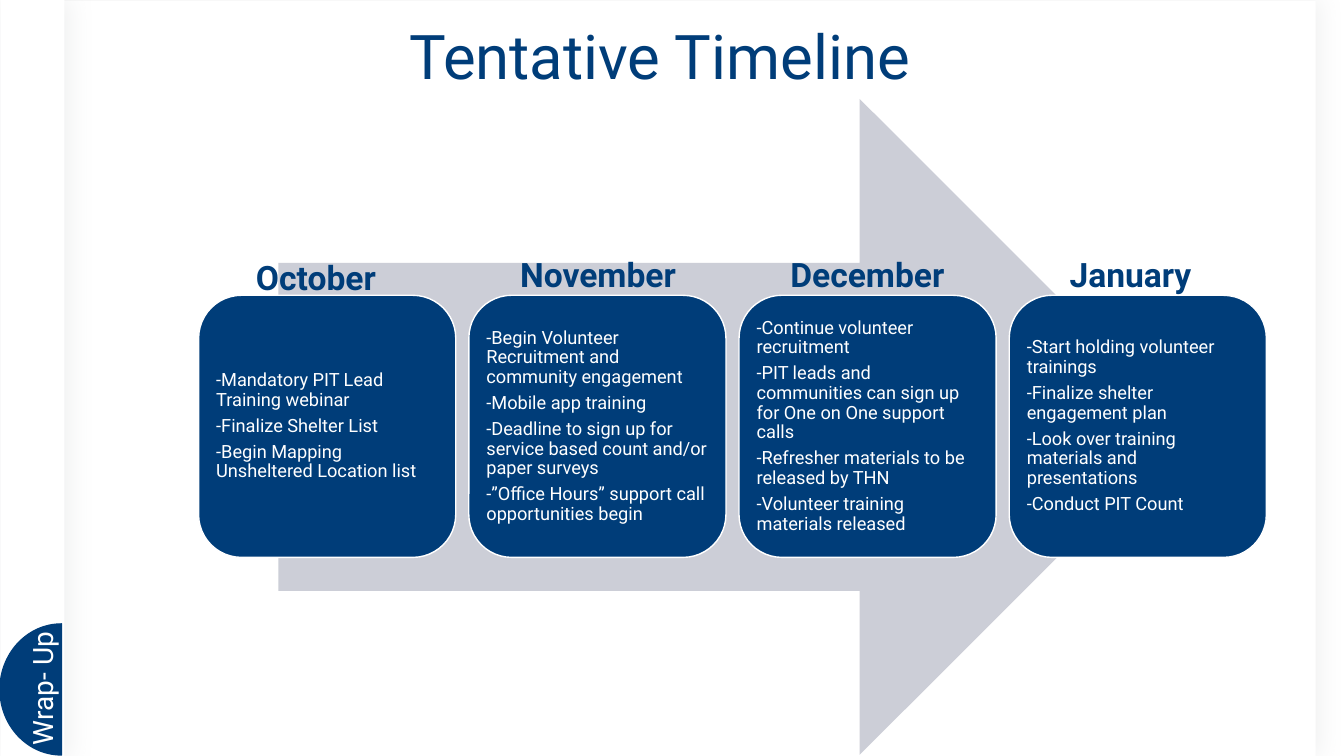
from math import cos, pi, sin

from lxml import etree
from pptx import Presentation
from pptx.dml.color import RGBColor
from pptx.enum.shapes import MSO_SHAPE
from pptx.enum.text import MSO_ANCHOR, PP_ALIGN
from pptx.oxml.ns import qn
from pptx.util import Inches, Pt

RECTANGLE = MSO_SHAPE.RECTANGLE
ROUNDED = MSO_SHAPE.ROUNDED_RECTANGLE
ARROW = MSO_SHAPE.RIGHT_ARROW
MIDDLE = MSO_ANCHOR.MIDDLE
LEFT = PP_ALIGN.LEFT
CENTER = PP_ALIGN.CENTER

NAVY = "003D79"
WHITE = "FFFFFF"
GRAY = "CCCED7"
SHADOW = "D3D5D6"

PANEL_LEFT = 1.97
PANEL_STEP = 2.68
MONTHS = [
    ("October", 2.44, 2.5, [
        "-Mandatory PIT Lead Training webinar",
        "-Finalize Shelter List",
        "-Begin Mapping Unsheltered Location list"]),
    ("November", 5.06, 2.47, [
        "-Begin Volunteer Recruitment and community engagement",
        "-Mobile app training",
        "-Deadline to sign up for service based count and/or paper surveys",
        "-”Office Hours” support call opportunities begin"]),
    ("December", 7.74, 2.47, [
        "-Continue volunteer recruitment",
        "-PIT leads and communities can sign up for One on One support calls",
        "-Refresher materials to be released by THN",
        "-Volunteer training materials released"]),
    ("January", 10.51, 2.47, [
        "-Start holding volunteer trainings",
        "-Finalize shelter engagement plan",
        "-Look over training materials and presentations",
        "-Conduct PIT Count"]),
]


def color(value):
    """Turn a hex string into a colour."""
    return RGBColor.from_string(value)


class TimelinePage:
    """Hold the style and the current slide."""

    font_name = "Roboto"

    def __init__(self, page):
        """Keep the slide to draw on."""
        self.page = page

    def format_runs(self, para, size, ink, bold=False):
        """Apply the font to every run of a paragraph."""
        for span in para.runs:
            span.font.name = self.font_name
            span.font.size = Pt(size)
            span.font.bold = bold
            span.font.color.rgb = color(ink)

    def paint(self, shape, fill, line=None):
        """Set the fill and outline of a shape."""
        shape.shadow.inherit = False
        shape.fill.solid()
        shape.fill.fore_color.rgb = color(fill)
        if line:
            shape.line.color.rgb = color(line)
            shape.line.width = Pt(1)
        else:
            shape.line.fill.background()

    def title(self, text, left, top, width, height):
        """Fill the title placeholder and bring it to the front."""
        box = self.page.shapes.title
        box.left, box.top = Inches(left), Inches(top)
        box.width, box.height = Inches(width), Inches(height)
        box.text_frame.text = text
        box.text_frame.vertical_anchor = MIDDLE
        para = box.text_frame.paragraphs[0]
        para.alignment = CENTER
        para.line_spacing = 0.9
        self.format_runs(para, 44, NAVY)
        self.page.shapes._spTree.append(box._element)

    def shape(self, kind, left, top, width, height, fill, line=None):
        """Add a preset shape."""
        shape = self.page.shapes.add_shape(
            kind, Inches(left), Inches(top), Inches(width), Inches(height))
        self.paint(shape, fill, line)
        return shape

    def sheet(self, left, top, width, height):
        """Add a white sheet with a soft shadow."""
        sheet = self.shape(RECTANGLE, left, top, width, height, WHITE)
        effects = sheet._element.spPr.find(qn("a:effectLst"))
        shadow = etree.SubElement(
            effects, qn("a:outerShdw"), blurRad=str(Pt(17)), dist=str(Pt(3)),
            dir="0", algn="l", rotWithShape="0")
        tint = etree.SubElement(shadow, qn("a:srgbClr"), val=SHADOW)
        etree.SubElement(tint, qn("a:alpha"), val="35000")

    def half_disc(self, right, top, width, height, steps=60):
        """Add the left half of an ellipse."""
        middle = top + height / 2
        angles = [pi * step / steps for step in range(steps + 1)]
        points = [(Inches(right - width * sin(angle)),
                   Inches(middle - height / 2 * cos(angle))) for angle in angles]
        builder = self.page.shapes.build_freeform(*points[0])
        builder.add_line_segments(points[1:], close=True)
        self.paint(builder.convert_to_shape(), NAVY, NAVY)

    def label(self, text, left, top, width, height, size, ink, bold=False):
        """Add a one-line text box."""
        box = self.page.shapes.add_textbox(
            Inches(left), Inches(top), Inches(width), Inches(height))
        box.text_frame.word_wrap = True
        box.text_frame.text = text
        self.format_runs(box.text_frame.paragraphs[0], size, ink, bold)
        return box

    def side_label(self, text, left, top, width, height):
        """Add a label that reads upwards."""
        box = self.label(text, left, top, width, height, 20, WHITE)
        box.rotation = 180
        box.text_frame._txBody.bodyPr.set("vert", "vert")

    def panel(self, tasks, left, top, width, height):
        """Add a rounded panel with a list of tasks."""
        panel = self.shape(ROUNDED, left, top, width, height, NAVY, WHITE)
        frame = panel.text_frame
        frame.word_wrap = True
        frame.vertical_anchor = MIDDLE
        frame.margin_left = frame.margin_right = Inches(0.05)
        frame.margin_top = frame.margin_bottom = Inches(0.05)
        frame.text = "\n".join(tasks)
        for para in frame.paragraphs:
            para.alignment = LEFT
            para.line_spacing = 0.9
            para.space_after = Pt(4.5)
            self.format_runs(para, 13, WHITE)


def main():
    """Build the timeline slide and save it."""
    deck = Presentation()
    deck.slide_width, deck.slide_height = Inches(13.33), Inches(7.5)
    timeline = TimelinePage(deck.slides.add_slide(deck.slide_layouts[5]))
    timeline.sheet(0.52, 0.01, 12.53, 7.49)
    timeline.sheet(0.01, 0, 0.63, 7.5)
    timeline.half_disc(0.61, 6.19, 0.61, 1.3)
    timeline.side_label("Wrap- Up", 0.2, 5.89, 0.54, 1.6)
    timeline.title("Tentative Timeline", 0.84, -0.13, 11.41, 1.45)
    timeline.shape(ARROW, 2.76, 0.98, 9.02, 6.51, GRAY)
    for index, (month, left, top, tasks) in enumerate(MONTHS):
        timeline.panel(tasks, PANEL_LEFT + index * PANEL_STEP, 2.93, 2.55, 2.6)
        timeline.label(month, left, top, 2.07, 0.5, 24, NAVY, bold=True)
    deck.save("out.pptx")


if __name__ == "__main__":
    main()
